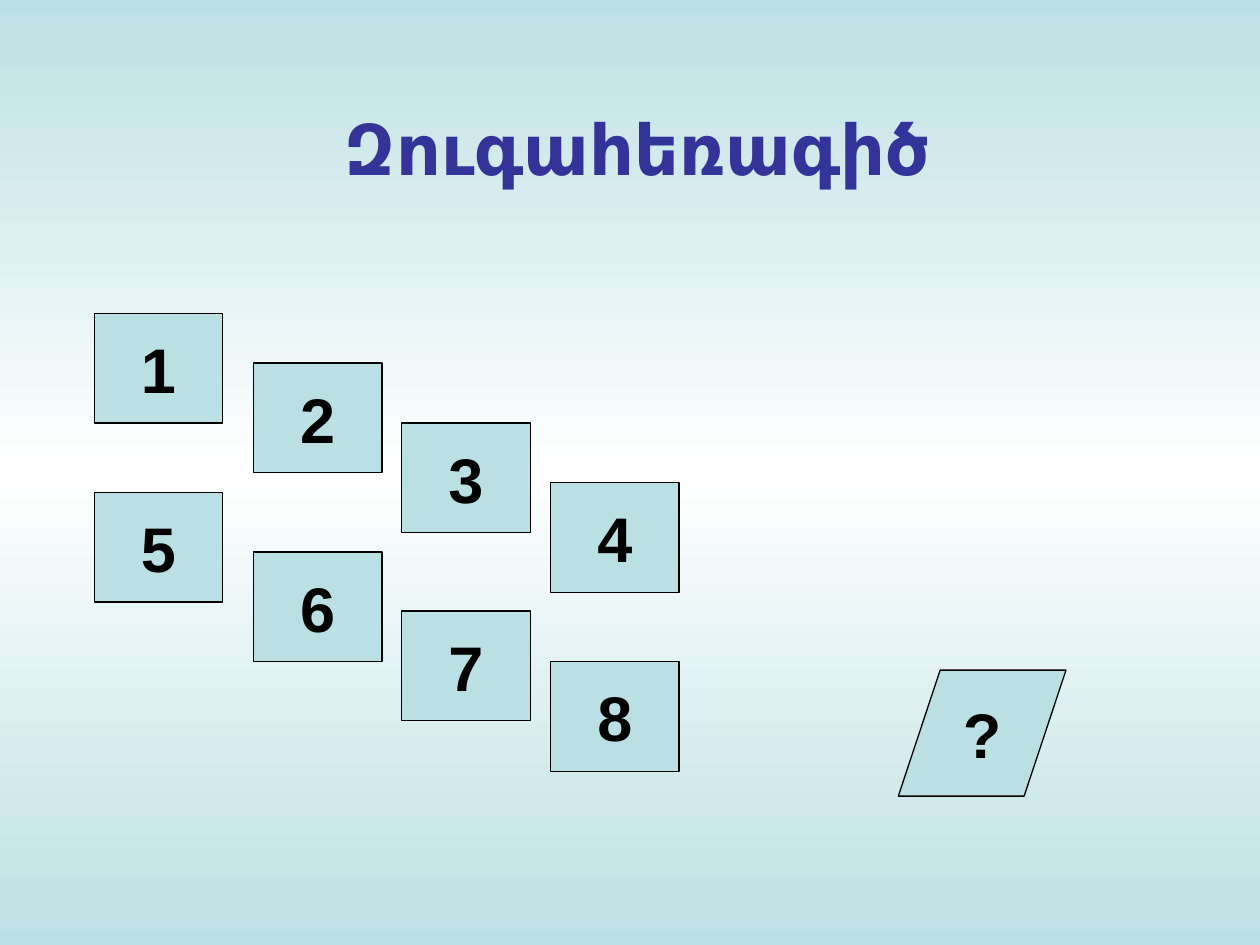
import copy
from dataclasses import dataclass

import pptx
import pptx.dml.color
import pptx.enum.shapes
import pptx.enum.text
import pptx.oxml.ns
import pptx.slide
import pptx.text.text
import pptx.util

Cm = pptx.util.Cm
RGB = pptx.dml.color.RGBColor
Shape = pptx.enum.shapes.MSO_SHAPE
Anchor = pptx.enum.text.MSO_ANCHOR


@dataclass(frozen=True)
class Theme:
    font: str = "Arial"
    tint: RGB = RGB(0xBB, 0xE0, 0xE3)
    white: RGB = RGB(0xFF, 0xFF, 0xFF)
    ink: RGB = RGB(0, 0, 0)
    heading: RGB = RGB(0x33, 0x33, 0x99)
    heading_size: float = 40
    label_size: float = 36
    outline: float = 0.75


@dataclass(frozen=True)
class Tile:
    label: str
    left: float
    top: float
    width: float = 2.59
    height: float = 2.21
    outline: Shape = Shape.RECTANGLE
    slant: float | None = None


THEME = Theme()

# Two descending rows share the same columns (centimetres)
COLUMNS = (1.9, 5.11, 8.1, 11.1)
ROW_TOPS = ((6.32, 7.32, 8.53, 9.73), (9.93, 11.13, 12.32, 13.34))
ANSWER = Tile("?", 18.11, 13.51, 3.38, 2.54, Shape.PARALLELOGRAM, 0.332)


def paint_background(slide: pptx.slide.Slide) -> None:
    fill = slide.background.fill
    fill.gradient()
    fill.gradient_angle = 270
    first_stop = slide.element.find(".//" + pptx.oxml.ns.qn("a:gs"))
    first_stop.addnext(copy.deepcopy(first_stop))
    colors = (THEME.tint, THEME.white, THEME.tint)
    for stop, position, color in zip(fill.gradient_stops, (0, 0.5, 1), colors):
        stop.position = position
        stop.color.rgb = color


def write(frame: pptx.text.text.TextFrame, text: str, size: float,
          color: RGB, anchor: Anchor) -> None:
    frame.text = text
    frame.vertical_anchor = anchor
    paragraph = frame.paragraphs[0]
    paragraph.alignment = pptx.enum.text.PP_ALIGN.CENTER
    font = paragraph.runs[0].font
    font.name = THEME.font
    font.size = pptx.util.Pt(size)
    font.bold = True
    font.color.rgb = color


def draw_heading(slide: pptx.slide.Slide, text: str) -> None:
    heading = slide.shapes.add_textbox(Cm(1.27), Cm(0.76), Cm(22.86), Cm(3.18))
    frame = heading.text_frame
    frame.word_wrap = True
    frame.margin_left = Cm(0.56)
    write(frame, text, THEME.heading_size, THEME.heading, Anchor.BOTTOM)


def draw_tile(slide: pptx.slide.Slide, tile: Tile) -> None:
    card = slide.shapes.add_shape(tile.outline, Cm(tile.left), Cm(tile.top),
                                  Cm(tile.width), Cm(tile.height))
    if tile.slant is not None:
        card.adjustments[0] = tile.slant
    card.shadow.inherit = False
    card.fill.solid()
    card.fill.fore_color.rgb = THEME.tint
    card.line.color.rgb = THEME.ink
    card.line.width = pptx.util.Pt(THEME.outline)
    card.text_frame.word_wrap = False
    write(card.text_frame, tile.label, THEME.label_size, THEME.ink, Anchor.MIDDLE)


def main() -> None:
    deck = pptx.Presentation()
    deck.slide_width, deck.slide_height = Cm(25.4), Cm(19.05)
    slide = deck.slides.add_slide(deck.slide_layouts[6])

    # Background and heading
    paint_background(slide)
    draw_heading(slide, "Զուգահեռագիծ")

    # Numbered tiles, counted row by row
    for row, tops in enumerate(ROW_TOPS):
        for column, (left, top) in enumerate(zip(COLUMNS, tops)):
            number = row * len(COLUMNS) + column + 1
            draw_tile(slide, Tile(str(number), left, top))

    # Answer shape
    draw_tile(slide, ANSWER)

    deck.save("out.pptx")


if __name__ == "__main__":
    main()
